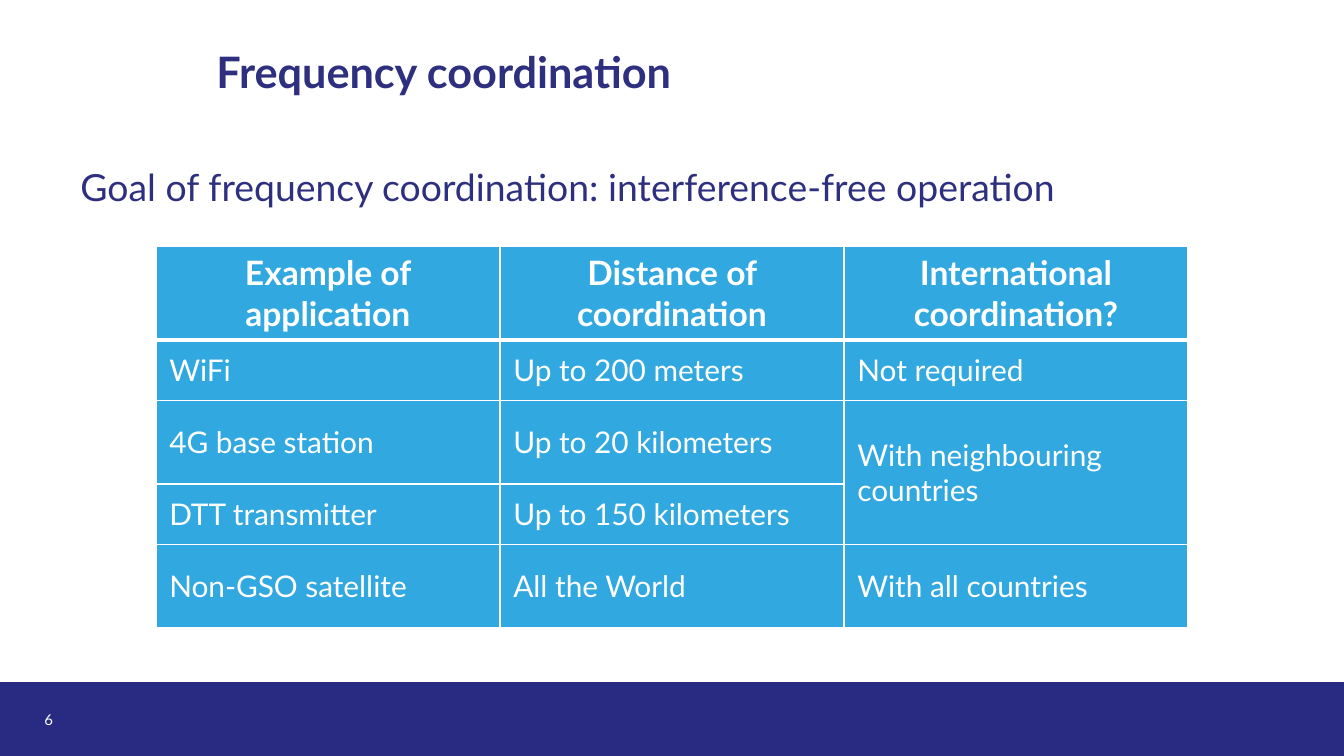
from dataclasses import dataclass

from lxml import etree
from pptx import Presentation
from pptx.dml.color import RGBColor
from pptx.enum.shapes import MSO_SHAPE
from pptx.enum.text import MSO_ANCHOR, PP_ALIGN
from pptx.oxml.ns import qn
from pptx.util import Inches, Pt

RECTANGLE = MSO_SHAPE.RECTANGLE
TOP, MIDDLE = MSO_ANCHOR.TOP, MSO_ANCHOR.MIDDLE
LEFT, CENTER = PP_ALIGN.LEFT, PP_ALIGN.CENTER


@dataclass(frozen=True)
class Theme:
    font: str = "Lato"
    white: str = "FFFFFF"
    bar: str = "292A81"
    ink: str = "2E2F7F"
    cell: str = "32A8E0"
    title_size: int = 40
    body_size: int = 20
    header_size: int = 18
    cell_size: int = 16
    number_size: int = 8
    thin_border: float = 1
    thick_border: float = 2.25


theme = Theme()


def write(text_frame, text, size, color, bold=False, align=LEFT, anchor=TOP):
    """Fill a text frame with one formatted paragraph and return it."""
    text_frame.text = text
    text_frame.word_wrap = True
    text_frame.vertical_anchor = anchor
    paragraph = text_frame.paragraphs[0]
    paragraph.alignment = align
    font = paragraph.runs[0].font
    font.name, font.size, font.bold = theme.font, Pt(size), bold
    font.color.rgb = RGBColor.from_string(color)
    return paragraph


def add_border(cell, side, width):
    """Draw one white border of a table cell."""
    properties = cell._tc.get_or_add_tcPr()
    line = etree.SubElement(properties, qn(f"a:ln{side}"), w=str(Pt(width)))
    fill = etree.SubElement(line, qn("a:solidFill"))
    etree.SubElement(fill, qn("a:srgbClr"), val=theme.white)


# A 16:9 slide
presentation = Presentation()
presentation.slide_width = Inches(10)
presentation.slide_height = Inches(10) * 9 // 16
slide = presentation.slides.add_slide(presentation.slide_layouts[5])

# Footer bar and slide number
bar_height = Inches(0.55)
bar_top = presentation.slide_height - bar_height
bar = slide.shapes.add_shape(RECTANGLE, 0, bar_top, presentation.slide_width, bar_height)
bar.shadow.inherit = False
bar.fill.solid()
bar.fill.fore_color.rgb = RGBColor.from_string(theme.bar)
bar.line.fill.background()

number = slide.shapes.add_textbox(Inches(0.33), bar_top, Inches(0.22), bar_height)
number_frame = number.text_frame
number_frame.margin_left = number_frame.margin_right = 0
number_frame.margin_top = number_frame.margin_bottom = 0
write(number_frame, "6", theme.number_size, theme.white, anchor=MIDDLE)

# Title, slightly raised from the baseline
title = slide.shapes.title
title.left, title.top = Inches(1.51), Inches(0.11)
title.width, title.height = Inches(4.72), Inches(0.77)
heading = write(title.text_frame, "Frequency coordination",
                theme.title_size, theme.ink, bold=True)
heading.runs[0]._r.get_or_add_rPr().set("baseline", "10000")

# Coordination table
rows = [
    ["Example of application", "Distance of coordination", "International coordination?"],
    ["WiFi", "Up to 200 meters", "Not required"],
    ["4G base station", "Up to 20 kilometers", "With neighbouring countries"],
    ["DTT transmitter", "Up to 150 kilometers", ""],
    ["Non-GSO satellite", "All the World", "With all countries"],
]
row_heights = [0.68, 0.45, 0.62, 0.45, 0.62]
frame = slide.shapes.add_table(len(rows), 3, Inches(1.16), Inches(1.83),
                               Inches(7.68), Inches(sum(row_heights)))
table = frame.table
table.first_row = table.horz_banding = False
for column in table.columns:
    column.width = Inches(2.56)

for row_index, (texts, height) in enumerate(zip(rows, row_heights)):
    table.rows[row_index].height = Inches(height)
    is_header = row_index == 0
    for column_index, text in enumerate(texts):
        cell = table.cell(row_index, column_index)
        cell.vertical_anchor = MIDDLE
        for side in "LRTB":
            below_header = (row_index, side) in [(0, "B"), (1, "T")]
            add_border(cell, side, theme.thick_border if below_header else theme.thin_border)
        cell.fill.solid()
        cell.fill.fore_color.rgb = RGBColor.from_string(theme.cell)
        if text:
            write(cell.text_frame, text,
                  theme.header_size if is_header else theme.cell_size, theme.white,
                  bold=is_header, align=CENTER if is_header else LEFT, anchor=MIDDLE)
table.cell(2, 2).merge(table.cell(3, 2))

# Goal statement
goal = slide.shapes.add_textbox(Inches(0.5), Inches(1.17), Inches(9), Inches(0.55))
statement = write(goal.text_frame, "Goal of frequency coordination: interference-free operation",
                  theme.body_size, theme.ink)
statement.space_after = Pt(4)

presentation.save("out.pptx")
